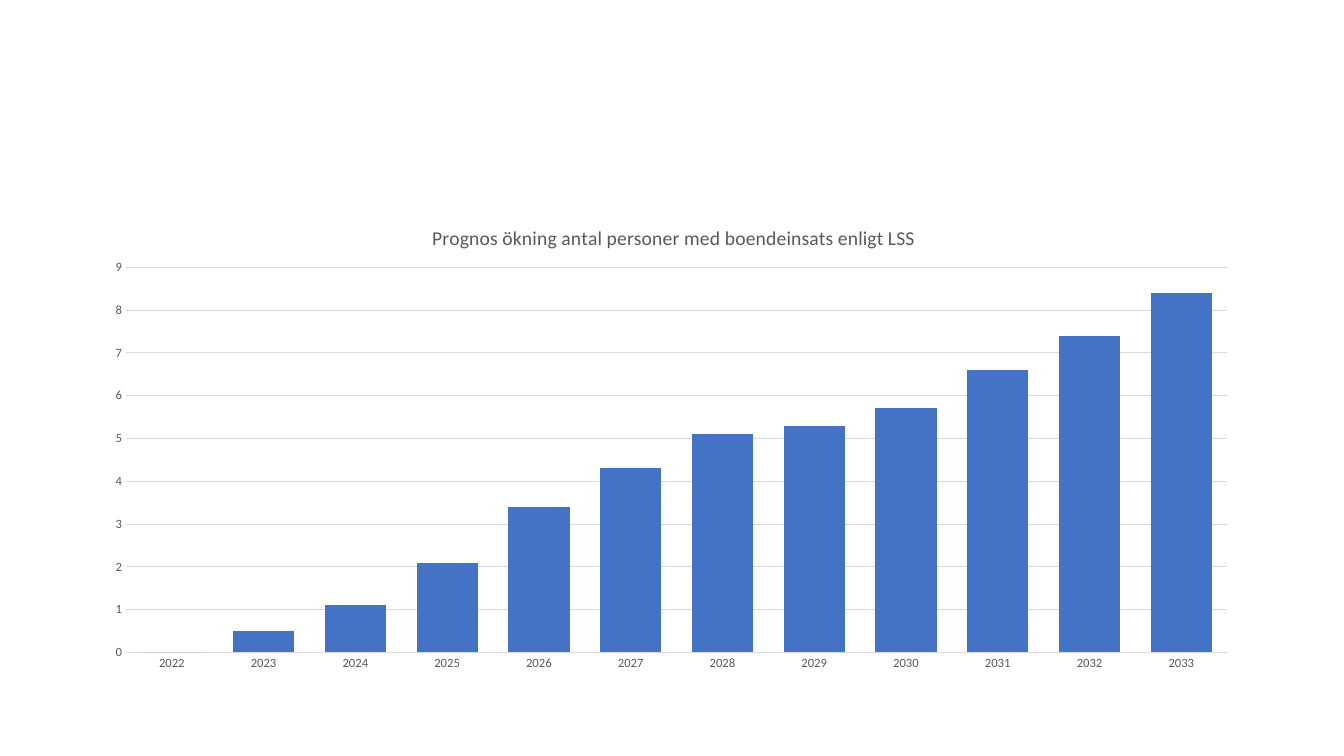
from typing import NamedTuple

from lxml import etree
from pptx import Presentation
from pptx import util as u
from pptx.chart.axis import _BaseAxis
from pptx.chart.chart import Chart
from pptx.chart.data import CategoryChartData
from pptx.dml.color import RGBColor
from pptx.dml.line import LineFormat
from pptx.enum import chart as ch
from pptx.oxml.ns import qn

PX = 9525  # EMU per px, 96 px to the inch
FONT = "Calibri"
BAR_BLUE = RGBColor(0x44, 0x72, 0xC4)
LINE_GREY = RGBColor(0xD9, 0xD9, 0xD9)
TEXT_GREY = RGBColor(0x59, 0x59, 0x59)

TITLE = "Prognos ökning antal personer med boendeinsats enligt LSS"
YEARS = [str(year) for year in range(2022, 2034)]
INCREASE = [0, 0.5, 1.1, 2.1, 3.4, 4.3, 5.1, 5.3, 5.7, 6.6, 7.4, 8.4]


class Box(NamedTuple):
    x: int
    y: int
    w: int
    h: int


CHART_BOX = Box(88, 192, 1104, 457)


def style_font(font, size: int) -> None:
    font.name = FONT
    font.size = u.Pt(size)
    font.bold = False
    font.color.rgb = TEXT_GREY


def style_line(line: LineFormat) -> None:
    line.color.rgb = LINE_GREY
    line.width = u.Pt(0.75)


def style_axis(axis: _BaseAxis) -> None:
    axis.major_tick_mark = axis.minor_tick_mark = ch.XL_TICK_MARK.NONE
    style_font(axis.tick_labels.font, 9)


def set_layout(parent: etree._Element, index: int, **settings: str | float) -> None:
    """Replace the automatic layout of a chart part by a manual one."""
    for old in parent.findall(qn("c:layout")):
        parent.remove(old)
    layout = etree.Element(qn("c:layout"))
    manual = etree.SubElement(layout, qn("c:manualLayout"))
    for name, value in settings.items():
        etree.SubElement(manual, qn(f"c:{name}")).set("val", str(value))
    parent.insert(index, layout)


def add_title(chart: Chart) -> None:
    chart.has_title = True
    tf = chart.chart_title.text_frame
    tf.text = TITLE
    style_font(tf.paragraphs[0].runs[0].font, 14)
    chart.chart_title.include_in_layout = False
    set_layout(chart.chart_title._element, 1,
               xMode="edge", yMode="edge", x=0.29, y=0.04)


def add_forecast_chart(slide) -> None:
    data = CategoryChartData(number_format="0")
    data.categories = YEARS
    data.add_series("Series 1", INCREASE)
    frame = slide.shapes.add_chart(
        ch.XL_CHART_TYPE.COLUMN_STACKED, *(n * PX for n in CHART_BOX), data)
    chart = frame.chart
    chart.has_legend = False
    chart.font.name = FONT
    chart.font.size = u.Pt(10)
    add_title(chart)

    plot = chart.plots[0]
    plot.gap_width = 50
    plot.overlap = 100
    plot.vary_by_categories = False
    fill = plot.series[0].format.fill
    fill.solid()
    fill.fore_color.rgb = BAR_BLUE

    style_axis(chart.category_axis)
    style_line(chart.category_axis.format.line)
    values = chart.value_axis
    style_axis(values)
    values.minimum_scale, values.maximum_scale, values.major_unit = 0, 9, 1
    values.tick_labels.number_format = "0"
    values.tick_labels.number_format_is_linked = False
    values.format.line.fill.background()
    values.has_major_gridlines = True
    style_line(values.major_gridlines.format.line)

    plot_area = chart._chartSpace.find(f".//{qn('c:plotArea')}")
    set_layout(plot_area, 0, layoutTarget="inner", xMode="edge", yMode="edge",
               x=0.029, y=0.137, w=0.95, h=0.803)


def main() -> None:
    prs = Presentation()
    prs.slide_width, prs.slide_height = 1280 * PX, 720 * PX
    add_forecast_chart(prs.slides.add_slide(prs.slide_layouts[6]))
    prs.save("out.pptx")


if __name__ == "__main__":
    main()
